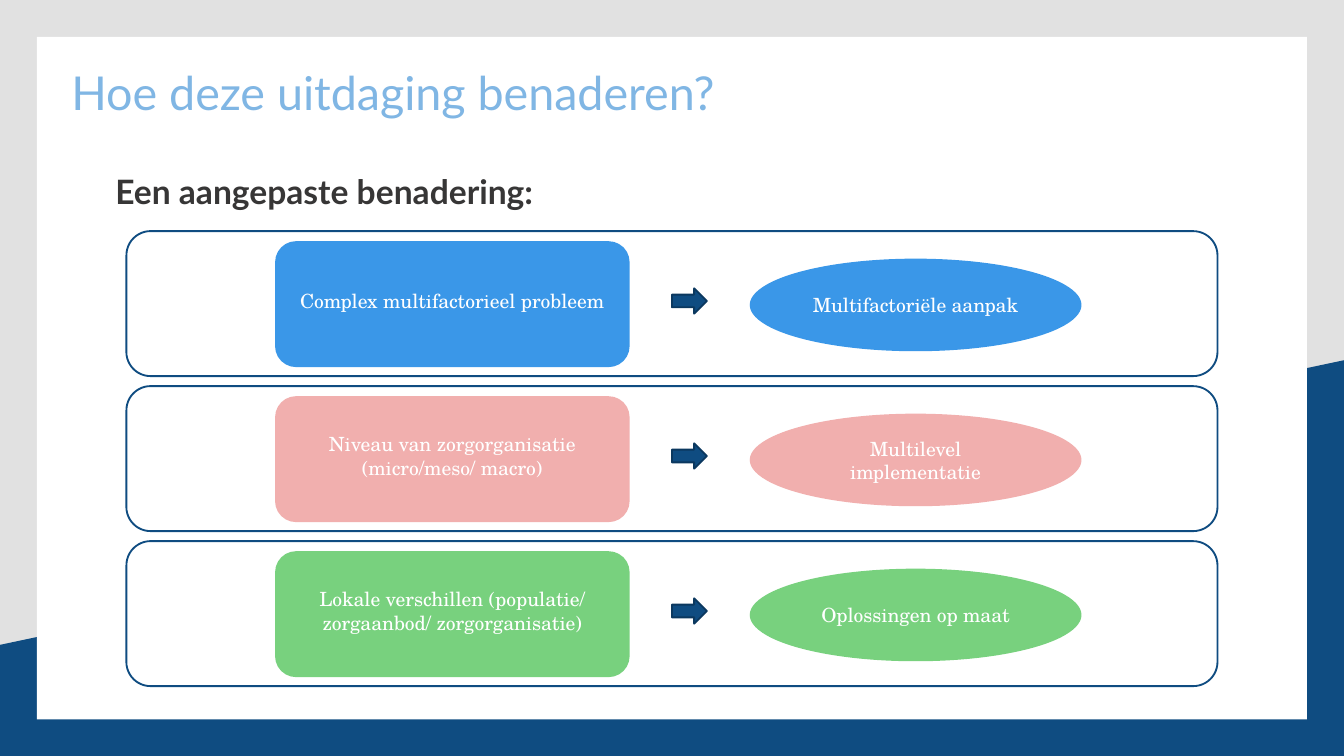
from pptx import Presentation
from pptx.dml.color import RGBColor
from pptx.enum.shapes import MSO_SHAPE
from pptx.enum.text import MSO_ANCHOR, MSO_AUTO_SIZE, PP_ALIGN
from pptx.util import Cm, Pt

TITLE = "Hoe deze uitdaging benaderen?"
SUBTITLE = "Een aangepaste benadering:"
ROWS = [
    ("Complex multifactorieel probleem", "Multifactoriële aanpak", "blue"),
    ("Niveau van zorgorganisatie (micro/meso/ macro)", "Multilevel implementatie", "pink"),
    ("Lokale verschillen (populatie/ zorgaanbod/ zorgorganisatie)", "Oplossingen op maat", "green"),
]
COLOURS = {
    "backdrop": "E1E1E1",
    "navy": "0F4C81",
    "arrow_edge": "0B385F",
    "white": "FFFFFF",
    "title": "80B6E4",
    "text": "373636",
    "blue": "3A97E8",
    "pink": "F1AFAE",
    "green": "78D17E",
}
HEADING_FONT = "Lato"
LABEL_FONT = "TeX Gyre Schola"
WIDTH, HEIGHT = 25.4, 14.29
WEDGE = [(WIDTH, 6.81), (WIDTH, HEIGHT), (0, HEIGHT), (0, 12.19)]
FIRST_ROW, ROW_PITCH = 4.37, 2.93


def colour(name):
    return RGBColor.from_string(COLOURS[name])


def paint(shape, fill=None, line=None):
    shape.shadow.inherit = False
    if fill:
        shape.fill.solid()
        shape.fill.fore_color.rgb = colour(fill)
    else:
        shape.fill.background()
    if line:
        shape.line.color.rgb = colour(line)
        shape.line.width = Pt(1)
    else:
        shape.line.fill.background()


def add_block(page, kind, left, top, width, height, fill=None, line=None):
    block = page.shapes.add_shape(kind, Cm(left), Cm(top), Cm(width), Cm(height))
    paint(block, fill, line)
    return block


def write(shape, text, font, size, ink, align=PP_ALIGN.LEFT, bold=False):
    frame = shape.text_frame
    frame.word_wrap = True
    para = frame.paragraphs[0]
    para.alignment = align
    span = para.add_run()
    span.text = text
    span.font.name = font
    span.font.size = Pt(size)
    span.font.bold = bold
    span.font.color.rgb = colour(ink)
    return frame


def add_backdrop(page):
    page.background.fill.solid()
    page.background.fill.fore_color.rgb = colour("backdrop")
    builder = page.shapes.build_freeform(Cm(WEDGE[0][0]), Cm(WEDGE[0][1]))
    builder.add_line_segments([(Cm(x), Cm(y)) for x, y in WEDGE[1:]], close=True)
    paint(builder.convert_to_shape(), "navy")
    add_block(page, MSO_SHAPE.RECTANGLE, 0.7, 0.7, 24, 12.9, "white")


def add_headings(page):
    title = page.shapes.title
    title.element.getparent().append(title.element)
    title.left, title.top, title.width, title.height = Cm(1.35), Cm(1.32), Cm(16.6), Cm(1.78)
    frame = write(title, TITLE, HEADING_FONT, 25, "title")
    frame.auto_size = MSO_AUTO_SIZE.NONE
    frame.vertical_anchor = MSO_ANCHOR.TOP
    frame.margin_left = frame.margin_right = frame.margin_top = frame.margin_bottom = 0
    frame.paragraphs[0].line_spacing = 0.9

    box = page.shapes.add_textbox(Cm(1.93), Cm(3.1), Cm(10.44), Cm(1.03))
    write(box, SUBTITLE, HEADING_FONT, 18, "text", bold=True)


def add_row(page, top, problem, answer, fill):
    add_block(page, MSO_SHAPE.ROUNDED_RECTANGLE, 2.39, top, 20.62, 2.74, line="navy")
    card = add_block(page, MSO_SHAPE.ROUNDED_RECTANGLE, 5.2, top + 0.19, 6.7, 2.38, fill)
    add_block(page, MSO_SHAPE.RIGHT_ARROW, 12.7, top + 1.08, 0.66, 0.48, "navy", "arrow_edge")
    oval = add_block(page, MSO_SHAPE.OVAL, 14.17, top + 0.52, 6.27, 1.75, fill)
    for shape, text in ((card, problem), (oval, answer)):
        frame = write(shape, text, LABEL_FONT, 10.5, "white", PP_ALIGN.CENTER)
        frame.vertical_anchor = MSO_ANCHOR.MIDDLE
    card.text_frame.margin_bottom = Cm(0.25)


def main():
    deck = Presentation()
    deck.slide_width, deck.slide_height = Cm(WIDTH), Cm(HEIGHT)
    page = deck.slides.add_slide(deck.slide_layouts.get_by_name("Title Only"))
    add_backdrop(page)
    add_headings(page)
    for index, row in enumerate(ROWS):
        add_row(page, FIRST_ROW + index * ROW_PITCH, *row)
    deck.save("out.pptx")


if __name__ == "__main__":
    main()
